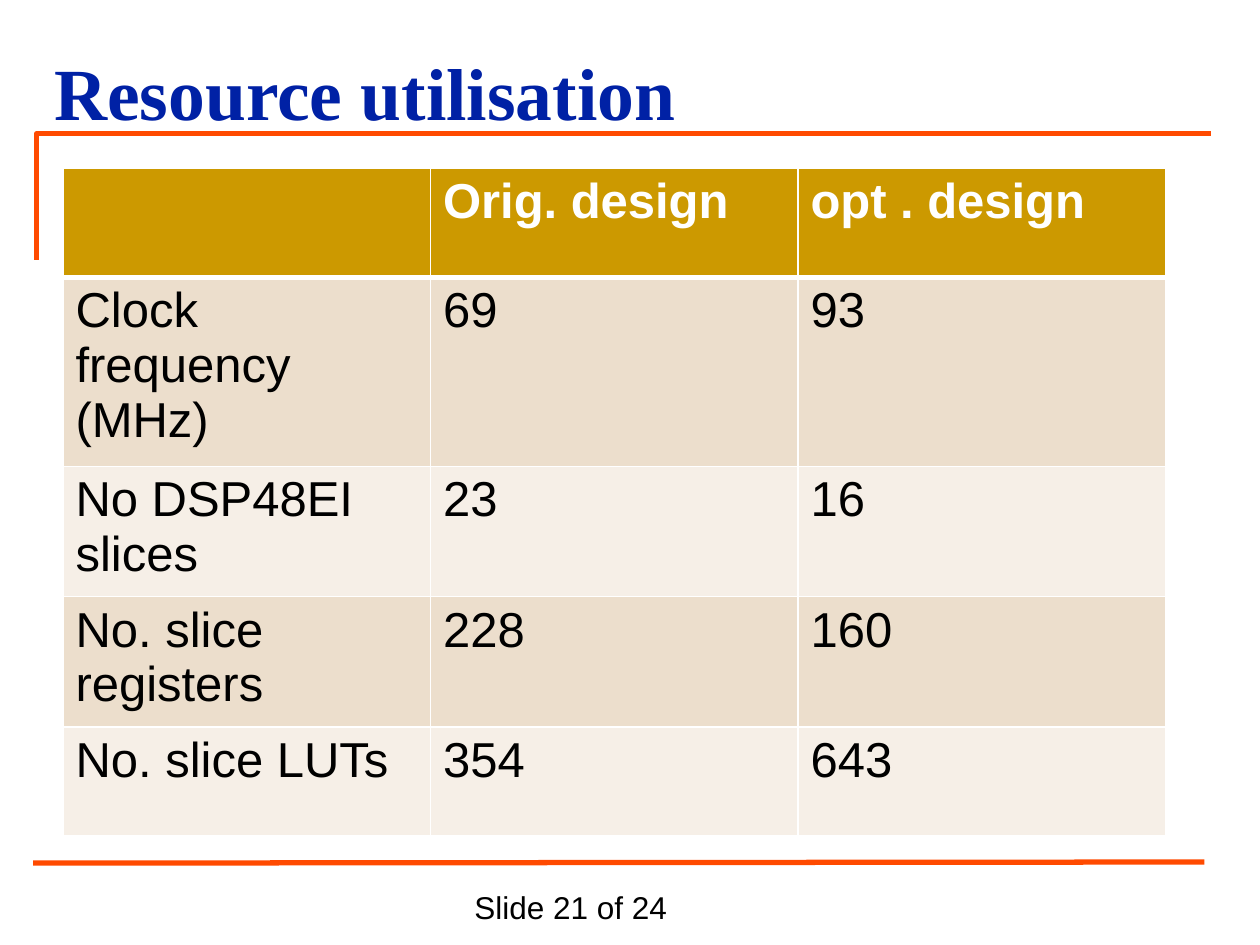
from lxml.etree import SubElement
from pptx import Presentation
from pptx.dml.color import RGBColor
from pptx.enum.shapes import MSO_CONNECTOR
from pptx.enum.text import MSO_ANCHOR, PP_ALIGN
from pptx.oxml.ns import qn
from pptx.util import Pt

TITLE = "Resource utilisation"
PAGE_LABEL = "Slide 21 of 24"
RESOURCES = [
    ("", "Orig. design", "opt . design"),
    ("Clock frequency (MHz)", "69", "93"),
    ("No DSP48EI slices", "23", "16"),
    ("No. slice registers", "228", "160"),
    ("No. slice LUTs", "354", "643"),
]

THEME = {
    "rule": "FF4A00",
    "header_fill": "CC9900",
    "bands": ("ECDECC", "F6EFE7"),
    "grid": "FFFFFF",
    "title": dict(name="Times New Roman", size=Pt(42), bold=True, color="0021A5"),
    "header": dict(name="Arial", size=Pt(28), bold=True, color="FFFFFF"),
    "body": dict(name="Arial", size=Pt(28), bold=False, color="000000"),
    "page": dict(name="Arial", size=Pt(18), bold=False, color="000000"),
}
RULE_WIDTH = 3
GRID_WIDTH, HEADER_RULE_WIDTH = 1, 3
TABLE_LEFT, TABLE_TOP, COLUMN_WIDTH, ROW_HEIGHT = 36, 96, 210, 62.4
BRACKET = [(21, 148.5), (21, 76.5), (691.75, 76.5)]
FOOTER_RULE = [(19, 493.2), (688.2, 492.6)]


def write(paragraph, text, style):
    paragraph.text = text
    for attribute, value in style.items():
        if attribute == "color":
            paragraph.font.color.rgb = RGBColor.from_string(value)
        else:
            setattr(paragraph.font, attribute, value)


def draw_rule(line):
    line.color.rgb = RGBColor.from_string(THEME["rule"])
    line.width = Pt(RULE_WIDTH)


def add_border(cell, side, width):
    border = SubElement(cell._tc.get_or_add_tcPr(), qn(f"a:ln{side}"), w=str(Pt(width)))
    fill = SubElement(border, qn("a:solidFill"))
    SubElement(fill, qn("a:srgbClr"), val=THEME["grid"])


def add_rules(slide):
    builder = slide.shapes.build_freeform(*map(Pt, BRACKET[0]))
    builder.add_line_segments([(Pt(x), Pt(y)) for x, y in BRACKET[1:]], close=False)
    bracket = builder.convert_to_shape()
    bracket.shadow.inherit = False
    bracket.fill.background()
    draw_rule(bracket.line)

    start, end = FOOTER_RULE
    footer = slide.shapes.add_connector(
        MSO_CONNECTOR.STRAIGHT, *map(Pt, start + end))
    SubElement(footer._element.spPr, qn("a:effectLst"))
    draw_rule(footer.line)


def add_title(slide):
    title = slide.shapes.title
    title.left, title.top, title.width, title.height = map(Pt, (23.76, 18, 648, 74))
    frame = title.text_frame
    layout = dict(vertical_anchor=MSO_ANCHOR.TOP, margin_top=Pt(8.6),
                  margin_left=Pt(7.2), word_wrap=True)
    for attribute, value in layout.items():
        setattr(frame, attribute, value)
    write(frame.paragraphs[0], TITLE, THEME["title"])
    frame.paragraphs[0].alignment = PP_ALIGN.LEFT


def add_page_label(slide):
    label = slide.shapes.add_textbox(*map(Pt, (264, 504, 138, 29)))
    label.text_frame.word_wrap = True
    write(label.text_frame.paragraphs[0], PAGE_LABEL, THEME["page"])


def add_resource_table(slide):
    row_count, column_count = len(RESOURCES), len(RESOURCES[0])
    table = slide.shapes.add_table(
        row_count, column_count, Pt(TABLE_LEFT), Pt(TABLE_TOP),
        Pt(column_count * COLUMN_WIDTH), Pt(row_count * ROW_HEIGHT)).table
    for row, values in enumerate(RESOURCES):
        is_header = row == 0
        fill = THEME["header_fill"] if is_header else THEME["bands"][(row - 1) % 2]
        widths = dict.fromkeys("LRTB", GRID_WIDTH)
        if is_header:
            widths["B"] = HEADER_RULE_WIDTH
        elif row == 1:
            widths["T"] = HEADER_RULE_WIDTH
        for column, value in enumerate(values):
            cell = table.cell(row, column)
            for side, width in widths.items():
                add_border(cell, side, width)
            cell.fill.solid()
            cell.fill.fore_color.rgb = RGBColor.from_string(fill)
            write(cell.text_frame.paragraphs[0], value,
                  THEME["header" if is_header else "body"])


def main():
    deck = Presentation()
    deck.slide_width, deck.slide_height = Pt(720), Pt(540)
    slide = deck.slides.add_slide(deck.slide_layouts[5])
    add_rules(slide)
    add_page_label(slide)
    add_title(slide)
    add_resource_table(slide)
    deck.save("out.pptx")


if __name__ == "__main__":
    main()
